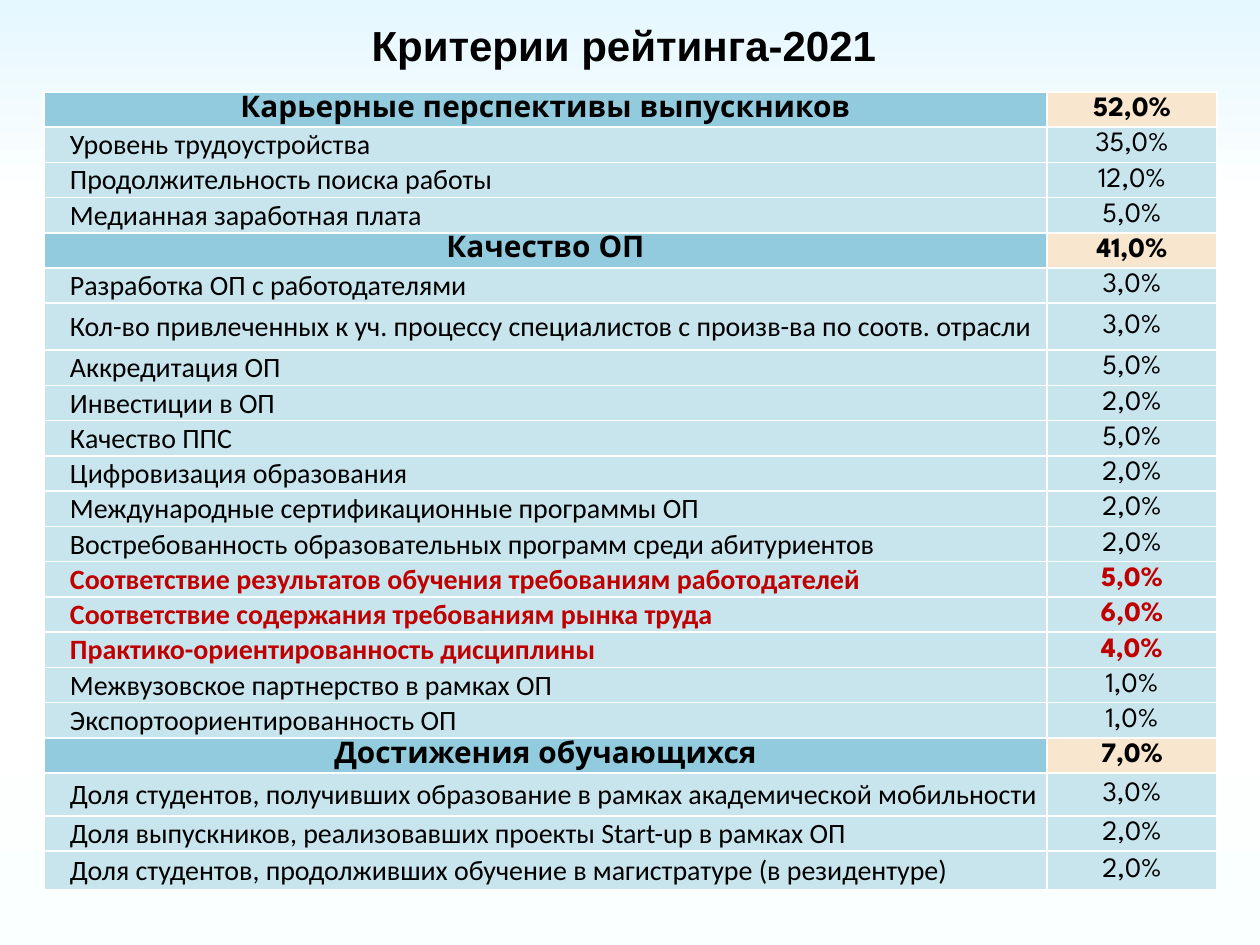
from lxml import etree
from pptx import Presentation
from pptx.dml.color import RGBColor
from pptx.enum.shapes import MSO_CONNECTOR
from pptx.enum.text import MSO_ANCHOR, PP_ALIGN
from pptx.oxml import parse_xml
from pptx.oxml.ns import nsdecls, qn
from pptx.util import Emu, Pt

STRAIGHT = MSO_CONNECTOR.STRAIGHT
MIDDLE = MSO_ANCHOR.MIDDLE
CENTER, LEFT = PP_ALIGN.CENTER, PP_ALIGN.LEFT

EMU_PER_PX = 914400 / 126
BLACK, RED, WHITE = "000000", "C00000", "FFFFFF"
GROUP_FILL, TOTAL_FILL, ITEM_FILL = "91CBDD", "F8E6CF", "C8E5EE"
ROW_HEIGHT, GROUP_HEIGHT = 33, 35
TALL_ROWS = {6: 47, 19: 43, 21: 39}

BACKGROUND_STOPS = [(2, "FAFFFF"), (26, "FFFFFF"), (79, "FEFFFF"), (100, "E5F7FF")]

# Diagonals: start x, start y, run down and left, width in points
DIAGONALS = [
    (1260, 537, 105, 0.75),
    (1260, 562, 341, 0.75),
    (1260, 573, 217, 0.75),
    (1259, 557, 198, 2.25),
    (1259, 620, 144, 2.25),
]

# Group name, group weight, then (criterion, weight) pairs
CRITERIA = [
    ("Карьерные перспективы выпускников", "52,0%", [
        ("Уровень трудоустройства", "35,0%"),
        ("Продолжительность поиска работы", "12,0%"),
        ("Медианная заработная плата", "5,0%"),
    ]),
    ("Качество ОП", "41,0%", [
        ("Разработка ОП с работодателями", "3,0%"),
        ("Кол-во привлеченных к уч. процессу специалистов с произв-ва по соотв. отрасли", "3,0%"),
        ("Аккредитация ОП", "5,0%"),
        ("Инвестиции в ОП", "2,0%"),
        ("Качество ППС", "5,0%"),
        ("Цифровизация образования", "2,0%"),
        ("Международные сертификационные программы ОП", "2,0%"),
        ("Востребованность образовательных программ среди абитуриентов", "2,0%"),
        ("Соответствие результатов обучения требованиям работодателей", "5,0%"),
        ("Соответствие содержания требованиям рынка труда", "6,0%"),
        ("Практико-ориентированность дисциплины", "4,0%"),
        ("Межвузовское партнерство в рамках ОП", "1,0%"),
        ("Экспортоориентированность ОП", "1,0%"),
    ]),
    ("Достижения обучающихся", "7,0%", [
        ("Доля студентов, получивших образование в рамках академической мобильности", "3,0%"),
        ("Доля выпускников, реализовавших проекты Start-up в рамках ОП", "2,0%"),
        ("Доля студентов, продолживших обучение в магистратуре (в резидентуре)", "2,0%"),
    ]),
]
HIGHLIGHTED = {
    "Соответствие результатов обучения требованиям работодателей",
    "Соответствие содержания требованиям рынка труда",
    "Практико-ориентированность дисциплины",
}


def px(length):
    return Emu(round(length * EMU_PER_PX))


def color(value):
    return RGBColor.from_string(value)


def add_span(para, text, font, size, ink=BLACK, bold=False):
    span = para.add_run()
    span.text = text
    span.font.name = font
    span.font.size = Pt(size)
    span.font.bold = bold
    span.font.color.rgb = color(ink)


def set_margins(target, left, top, right, bottom):
    target.margin_left, target.margin_top = px(left), px(top)
    target.margin_right, target.margin_bottom = px(right), px(bottom)


def paint_background(page):
    stops = "".join(
        f'<a:gs pos="{percent * 1000}"><a:srgbClr val="{value}"/></a:gs>'
        for percent, value in BACKGROUND_STOPS
    )
    gradient = parse_xml(
        f'<a:gradFill {nsdecls("a")} rotWithShape="1"><a:gsLst>{stops}</a:gsLst>'
        '<a:lin ang="16200000" scaled="0"/></a:gradFill>'
    )
    fill = page.background.fill
    fill.solid()
    properties = page.background._cSld.bg.bgPr
    properties.replace(properties.find(qn("a:solidFill")), gradient)


def draw_diagonals(page):
    for x, y, run, width in DIAGONALS:
        line = page.shapes.add_connector(STRAIGHT, px(x), px(y), px(x - run), px(y + run))
        line.line.color.rgb = color(WHITE)
        line.line.width = Pt(width)
        etree.SubElement(line._element.spPr, qn("a:effectLst"))


def place_title(page, left, top, width, height):
    title = page.shapes.title
    title.left, title.top, title.width, title.height = map(px, (left, top, width, height))
    frame = title.text_frame
    frame.vertical_anchor = MIDDLE
    frame.word_wrap = True
    set_margins(frame, 9, 5, 9, 5)
    para = frame.paragraphs[0]
    para.alignment = CENTER
    add_span(para, "Критерии рейтинга-2021", "Arial", 24, bold=True)


def add_borders(cell):
    properties = cell._tc.get_or_add_tcPr()
    for index, side in enumerate(("lnL", "lnR", "lnT", "lnB")):
        properties.insert(index, parse_xml(
            f'<a:{side} {nsdecls("a")} w="{Pt(1)}"><a:solidFill>'
            f'<a:srgbClr val="{WHITE}"/></a:solidFill></a:{side}>'
        ))


def fill_cell(cell, text, fill, font, size, ink, bold, align=CENTER, indent=0):
    cell.fill.solid()
    cell.fill.fore_color.rgb = color(fill)
    cell.vertical_anchor = MIDDLE
    set_margins(cell, 1, 1, 1, 0)
    add_borders(cell)
    para = cell.text_frame.paragraphs[0]
    para.alignment = align
    if indent:
        para._p.get_or_add_pPr().set("marL", str(px(indent)))
    add_span(para, text, font, size, ink, bold)


def place_criteria(page, left, top, widths):
    # Flatten the groups into rows: text, weight, is it a group
    rows = []
    for name, total, items in CRITERIA:
        rows.append((name, total, True))
        rows += [(item, weight, False) for item, weight in items]
    heights = [
        GROUP_HEIGHT if is_group else TALL_ROWS.get(index, ROW_HEIGHT)
        for index, (_, _, is_group) in enumerate(rows)
    ]
    table = page.shapes.add_table(
        len(rows), len(widths), px(left), px(top), px(sum(widths)), px(sum(heights))
    ).table
    table.first_row = table.horz_banding = False
    for column, width in zip(table.columns, widths):
        column.width = px(width)
    for row, height, (text, weight, is_group) in zip(table.rows, heights, rows):
        row.height = px(height)
        label, value = row.cells
        ink = RED if text in HIGHLIGHTED else BLACK
        bold = is_group or text in HIGHLIGHTED
        if is_group:
            fill_cell(label, text, GROUP_FILL, "League Spartan", 17, ink, bold)
        else:
            fill_cell(label, text, ITEM_FILL, "Calibri", 16, ink, bold, LEFT, 25)
        value_fill = TOTAL_FILL if is_group else ITEM_FILL
        fill_cell(value, weight, value_fill, "League Spartan", 16, ink, bold)


def main():
    deck = Presentation()
    deck.slide_width, deck.slide_height = px(1260), px(945)
    page = deck.slides.add_slide(deck.slide_layouts[5])
    paint_background(page)
    draw_diagonals(page)
    place_title(page, 52, 16, 1144, 58)
    place_criteria(page, 44, 92, (1003, 170))
    deck.save("out.pptx")


if __name__ == "__main__":
    main()
